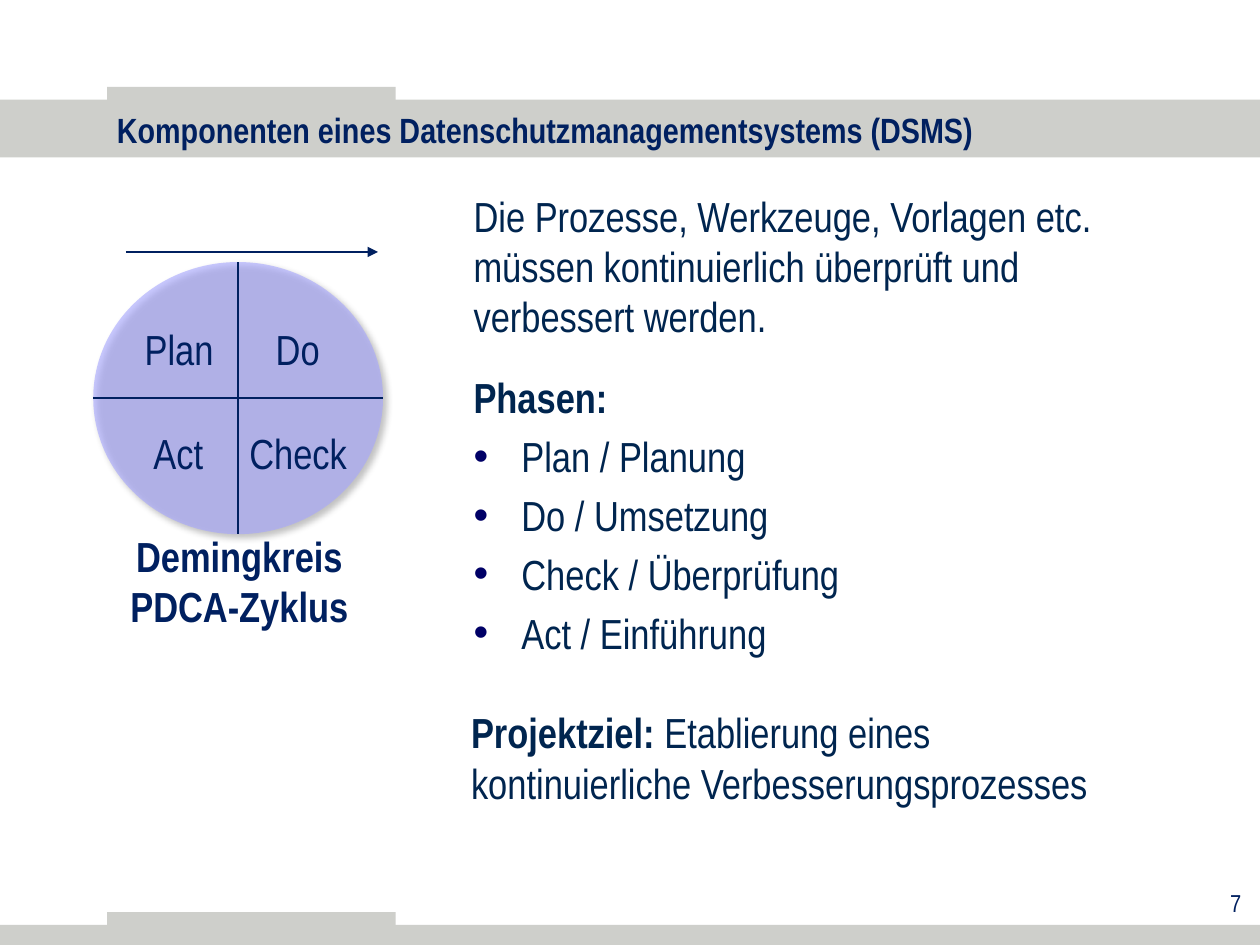
from dataclasses import dataclass

import pptx
import pptx.dml.color
import pptx.enum.shapes
import pptx.enum.text
import pptx.oxml
import pptx.oxml.ns
import pptx.util

Inches = pptx.util.Inches
Pt = pptx.util.Pt
Align = pptx.enum.text.PP_ALIGN
Anchor = pptx.enum.text.MSO_ANCHOR
Shape = pptx.enum.shapes.MSO_SHAPE
NAMESPACE = pptx.oxml.ns.nsdecls("a")

NAVY = "002060"
BODY_BLUE = "00254F"
BAND_GREY = "CECFCB"


@dataclass(frozen=True)
class Area:
    left: float
    top: float
    width: float
    height: float

    def lengths(self) -> list:
        return [Inches(value) for value in (self.left, self.top, self.width, self.height)]


@dataclass(frozen=True)
class Span:
    text: str
    bold: bool = False


@dataclass(frozen=True)
class Para:
    spans: tuple[Span, ...]
    space_before: float = 0
    bullet: bool = False
    align: Align = Align.LEFT


@dataclass(frozen=True)
class TextBlock:
    area: Area
    paras: tuple[Para, ...]
    size: int = 24
    color: str = NAVY
    wrap: bool = True
    anchor: Anchor = Anchor.TOP


def rgb(value: str) -> pptx.dml.color.RGBColor:
    return pptx.dml.color.RGBColor.from_string(value)


def add_xml(parent, xml: str) -> None:
    parent.append(pptx.oxml.parse_xml(xml))


def set_all(target, values: dict) -> None:
    for name, value in values.items():
        setattr(target, name, value)


def add_bullet(para) -> None:
    properties = para._p.get_or_add_pPr()
    properties.set("marL", str(Inches(0.38)))
    properties.set("indent", str(Inches(-0.38)))
    add_xml(properties, f'<a:buClr {NAMESPACE}><a:srgbClr val="000066"/></a:buClr>')
    add_xml(properties, f'<a:buFont {NAMESPACE} typeface="Arial"/>')
    add_xml(properties, f'<a:buChar {NAMESPACE} char="•"/>')


def draw_text(page, block: TextBlock) -> None:
    frame = page.shapes.add_textbox(*block.area.lengths()).text_frame
    set_all(frame, {"word_wrap": block.wrap, "vertical_anchor": block.anchor})
    for index, item in enumerate(block.paras):
        para = frame.add_paragraph() if index else frame.paragraphs[0]
        if item.bullet:
            add_bullet(para)
        para.alignment = item.align
        if index:
            para.space_before = Pt(item.space_before)
        for span in item.spans:
            for line_index, line in enumerate(span.text.split("\n")):
                if line_index:
                    para.add_line_break()
                run = para.add_run()
                run.text = line
                set_all(run.font, {"name": "Arial Narrow", "size": Pt(block.size), "bold": span.bold})
                run.font.color.rgb = rgb(block.color)


def draw_shape(page, kind: Shape, area: Area, color: str):
    shape = page.shapes.add_shape(kind, *area.lengths())
    shape.shadow.inherit = False
    shape.fill.solid()
    shape.fill.fore_color.rgb = rgb(color)
    shape.line.fill.background()
    return shape


def style_line(line) -> None:
    line.color.rgb = rgb(NAVY)
    line.width = Pt(1)


def draw_wheel(page, area: Area) -> None:
    wheel = draw_shape(page, Shape.OVAL, area, "A5A5FF")
    properties = wheel._element.spPr
    fill_color = properties.find(".//" + pptx.oxml.ns.qn("a:srgbClr"))
    add_xml(fill_color, f'<a:alpha {NAMESPACE} val="60000"/>')
    effects = properties.find(pptx.oxml.ns.qn("a:effectLst"))
    add_xml(
        effects,
        f'<a:outerShdw {NAMESPACE} blurRad="{Pt(4)}" dist="{Pt(3)}" dir="2700000" '
        'algn="tl" rotWithShape="0"><a:srgbClr val="000000"><a:alpha val="40000"/>'
        "</a:srgbClr></a:outerShdw>",
    )
    middle_x = area.left + area.width / 2
    middle_y = area.top + area.height / 2
    draw_line(page, (middle_x, area.top), (middle_x, area.top + area.height))
    draw_line(page, (area.left, middle_y), (area.left + area.width, middle_y))


def draw_line(page, start: tuple, end: tuple) -> None:
    ends = [Inches(value) for value in (*start, *end)]
    line = page.shapes.add_connector(pptx.enum.shapes.MSO_CONNECTOR.STRAIGHT, *ends)
    add_xml(line._element.spPr, f"<a:effectLst {NAMESPACE}/>")
    style_line(line.line)


def curve_points(knots: list, steps: int = 12) -> list:
    points = []
    for first in range(0, len(knots) - 1, 3):
        a, b, c, d = knots[first:first + 4]
        for step in range(1, steps + 1):
            t = step / steps
            weights = ((1 - t) ** 3, 3 * t * (1 - t) ** 2, 3 * t * t * (1 - t), t ** 3)
            points.append(tuple(sum(w * p[axis] for w, p in zip(weights, (a, b, c, d))) for axis in (0, 1)))
    return points


def draw_turn_arrow(page, knots: list) -> None:
    builder = page.shapes.build_freeform(*knots[0], scale=Inches(1))
    builder.add_line_segments(curve_points(knots), close=False)
    arrow = builder.convert_to_shape()
    arrow.shadow.inherit = False
    arrow.fill.background()
    style_line(arrow.line)
    add_xml(arrow.line._get_or_add_ln(), f'<a:tailEnd {NAMESPACE} type="triangle"/>')


BANDS = [
    Area(0, 0.79, 10, 0.46),
    Area(0, 7.34, 10, 0.16),
    Area(0.85, 0.69, 2.29, 0.13),
    Area(0.85, 7.24, 2.29, 0.13),
]
ARROW_KNOTS = [
    (0.77, 2.44), (0.84, 2.38), (1.02, 2.17), (1.18, 2.08), (1.35, 1.98),
    (1.55, 1.89), (1.77, 1.87), (1.98, 1.85), (2.24, 1.9), (2.47, 1.99),
    (2.69, 2.07), (2.98, 2.31), (3.11, 2.4),
]
PHASES = ["Plan / Planung", "Do / Umsetzung", "Check / Überprüfung", "Act / Einführung"]
QUADRANTS = {
    "Plan": Area(1.05, 2.52, 0.76, 0.5),
    "Do": Area(2.09, 2.52, 0.56, 0.5),
    "Act": Area(1.12, 3.34, 0.6, 0.5),
    "Check": Area(1.88, 3.34, 0.99, 0.5),
}
INTRO = "Die Prozesse, Werkzeuge, Vorlagen etc. müssen kontinuierlich überprüft und\nverbessert werden."
TEXT_BLOCKS = [
    TextBlock(
        Area(0.83, 0.82, 8.7, 0.42),
        (Para((Span("Komponenten eines Datenschutzmanagementsystems (DSMS)", True),)),),
        size=20, anchor=Anchor.MIDDLE,
    ),
    TextBlock(
        Area(3.66, 1.46, 5.92, 4.1),
        (
            Para((Span(INTRO),)),
            Para((Span("Phasen:", True),), space_before=17.5),
            *(Para((Span(phase),), space_before=4.8, bullet=True) for phase in PHASES),
        ),
        color=BODY_BLUE,
    ),
    TextBlock(
        Area(3.64, 5.56, 5.17, 1.31),
        (Para((
            Span("Projektziel: ", True),
            Span("Etablierung eines kontinuierliche Verbesserungsprozesses"),
        )),),
        color=BODY_BLUE,
    ),
    TextBlock(Area(7.73, 7, 2.22, 0.43), (Para((Span("7"),), align=Align.RIGHT),), size=14),
    *(TextBlock(area, (Para((Span(label),)),), wrap=False) for label, area in QUADRANTS.items()),
    TextBlock(
        Area(0.73, 4.16, 2.34, 0.94),
        (Para((Span("Demingkreis\nPDCA-Zyklus", True),), align=Align.CENTER),),
    ),
]


def main() -> None:
    deck = pptx.Presentation()
    set_all(deck, {"slide_width": Inches(10), "slide_height": Inches(7.5)})
    page = deck.slides.add_slide(deck.slide_layouts[6])
    for band in BANDS:
        draw_shape(page, Shape.RECTANGLE, band, BAND_GREY)
    draw_wheel(page, Area(0.74, 2.08, 2.3, 2.16))
    draw_turn_arrow(page, ARROW_KNOTS)
    for block in TEXT_BLOCKS:
        draw_text(page, block)
    deck.save("out.pptx")


if __name__ == "__main__":
    main()
